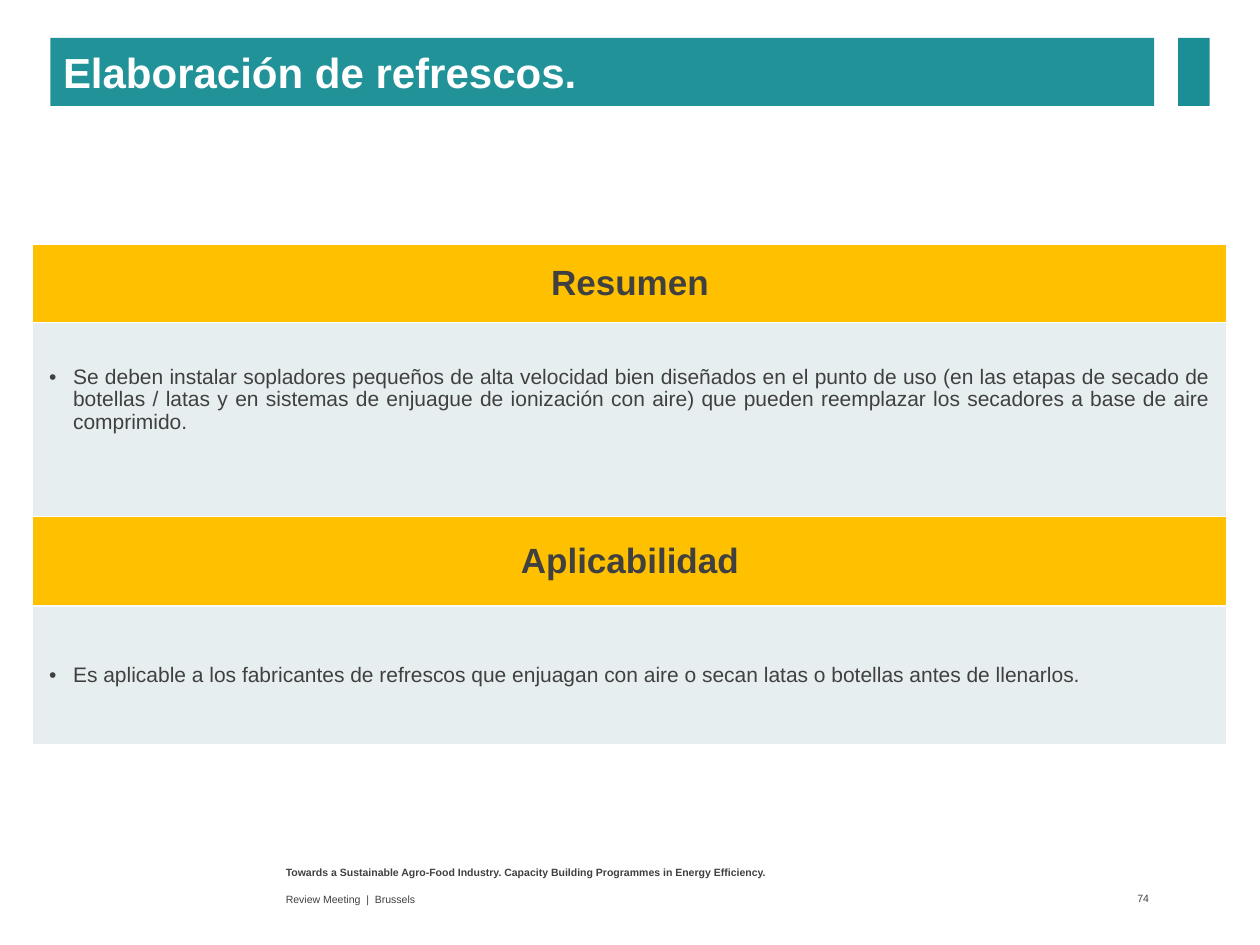
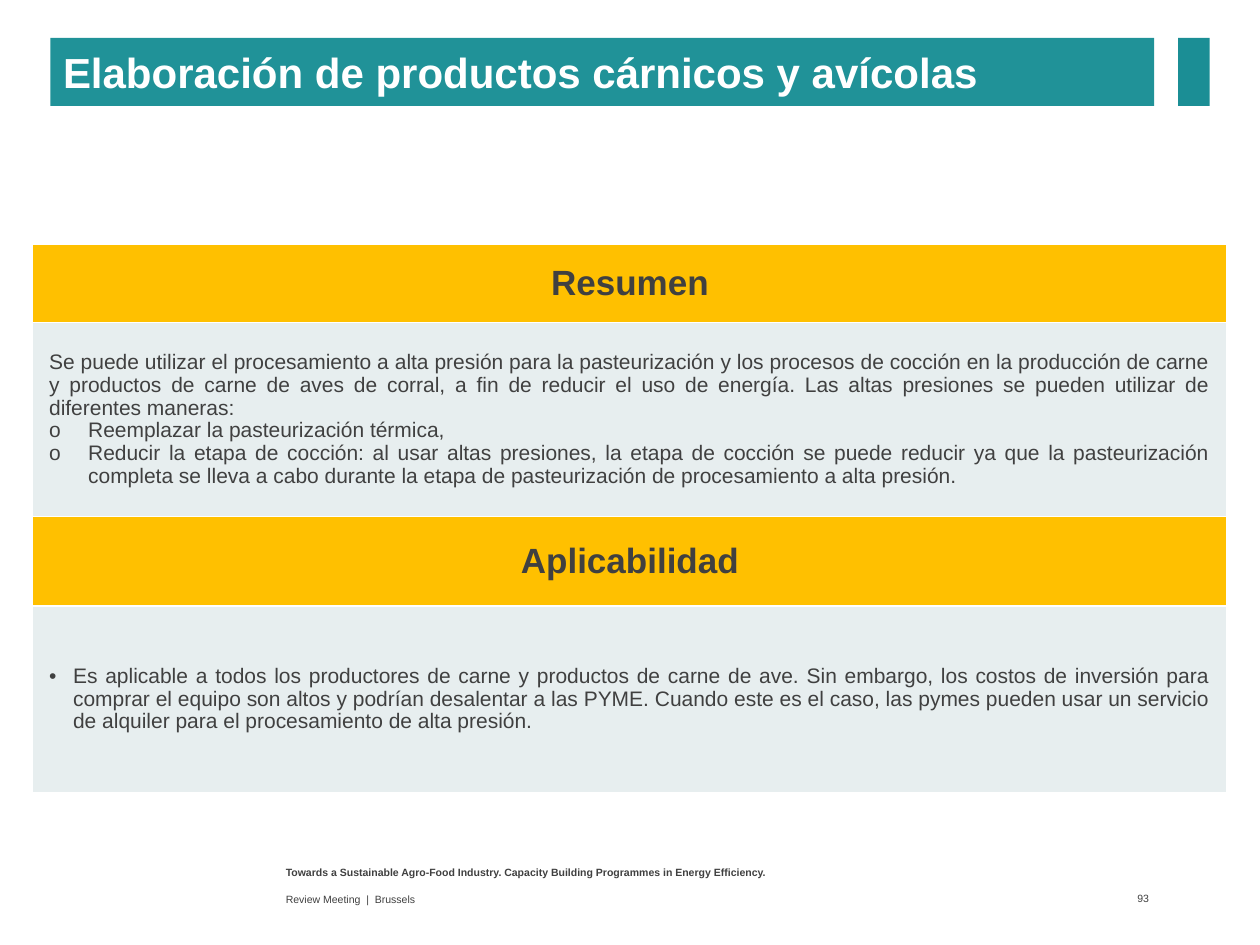
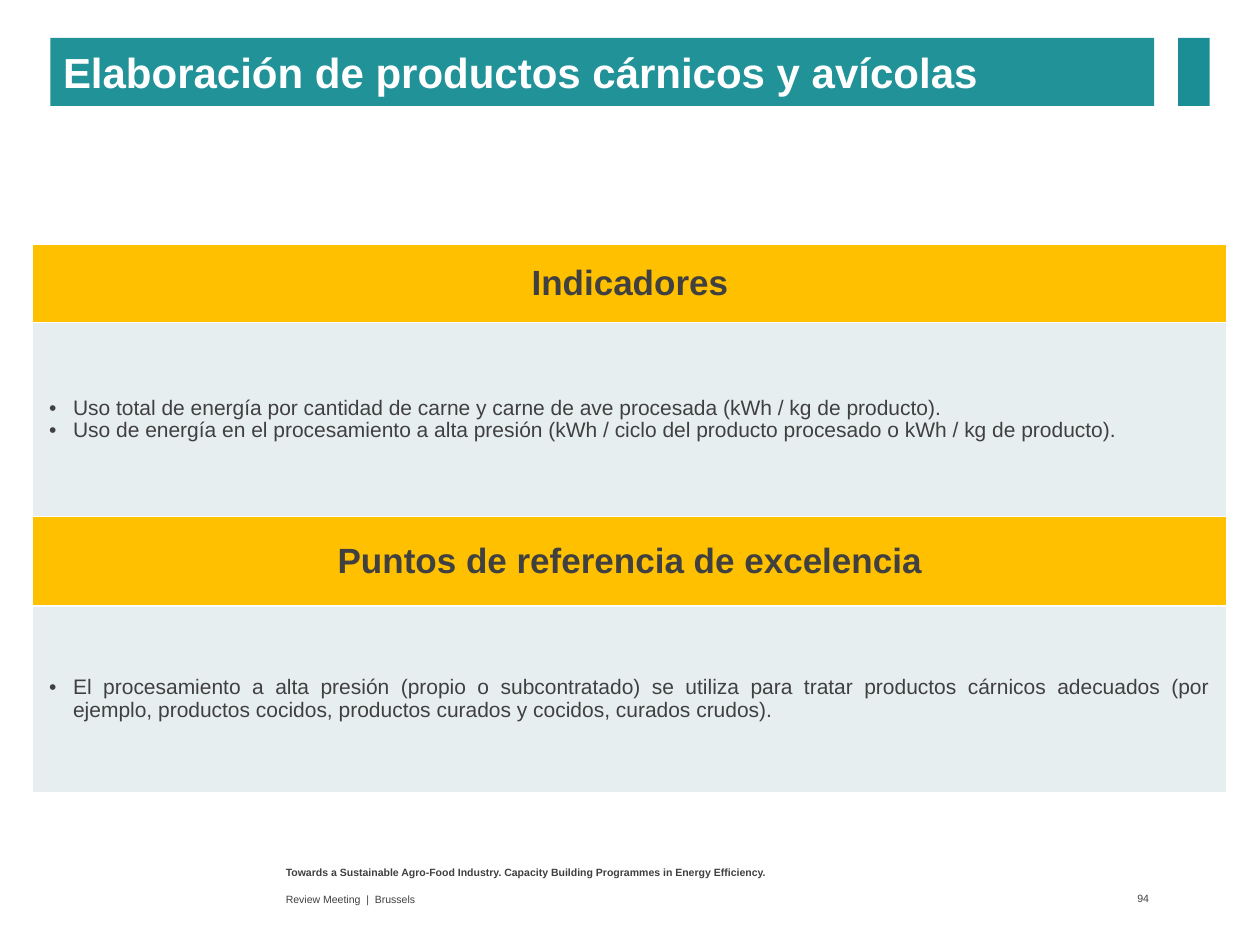
from pptx import Presentation
from pptx import util as u
from pptx.dml.color import RGBColor
from pptx.enum import shapes, text
from pptx.oxml.ns import qn
from lxml import etree

FONT = "Arial"
TEAL, DARK_TEAL, AMBER, PALE = "209298", "1B8E95", "FFC000", "E7EEEF"
INK, WHITE = "404040", "FFFFFF"

PROGRAMME = ("Towards a Sustainable Agro-Food Industry. "
             "Capacity Building Programmes in Energy Efficiency.")
MEETING = "Review Meeting  |  Brussels"

# Indent in inches for each bullet character
INDENTS = {"•": 0.19, "o": 0.31, None: 0}

TABLE_LEFT, TABLE_TOP, TABLE_WIDTH = 0.26, 1.94, 9.48

# Each panel: heading, row heights, extra space under the text, (bullet, text) items
SLIDES = [
    {"title": "Elaboración de refrescos.", "number": 74, "panels": [
        ("Resumen", (0.62, 1.54), 0.31, [
            ("•", "Se deben instalar sopladores pequeños de alta velocidad bien diseñados en el "
                  "punto de uso (en las etapas de secado de botellas / latas y en sistemas de "
                  "enjuague de ionización con aire) que pueden reemplazar los secadores a base de "
                  "aire comprimido.")]),
        ("Aplicabilidad", (0.71, 1.1), 0, [
            ("•", "Es aplicable a los fabricantes de refrescos que enjuagan con aire o secan latas "
                  "o botellas antes de llenarlos.")]),
    ]},
    {"title": "Elaboración de productos cárnicos y avícolas", "number": 93, "panels": [
        ("Resumen", (0.62, 1.54), 0, [
            (None, "Se puede utilizar el procesamiento a alta presión para la pasteurización y los "
                   "procesos de cocción en la producción de carne y productos de carne de aves de "
                   "corral, a fin de reducir el uso de energía. Las altas presiones se pueden "
                   "utilizar de diferentes maneras:"),
            ("o", "Reemplazar la pasteurización térmica,"),
            ("o", "Reducir la etapa de cocción: al usar altas presiones, la etapa de cocción se "
                  "puede reducir ya que la pasteurización completa se lleva a cabo durante la etapa "
                  "de pasteurización de procesamiento a alta presión.")]),
        ("Aplicabilidad", (0.71, 1.48), 0, [
            ("•", "Es aplicable a todos los productores de carne y productos de carne de ave. Sin "
                  "embargo, los costos de inversión para comprar el equipo son altos y podrían "
                  "desalentar a las PYME. Cuando este es el caso, las pymes pueden usar un servicio "
                  "de alquiler para el procesamiento de alta presión.")]),
    ]},
    {"title": "Elaboración de productos cárnicos y avícolas", "number": 94, "panels": [
        ("Indicadores", (0.62, 1.54), 0, [
            ("•", "Uso total de energía por cantidad de carne y carne de ave procesada "
                  "(kWh / kg de producto)."),
            ("•", "Uso de energía en el procesamiento a alta presión (kWh / ciclo del producto "
                  "procesado o kWh / kg de producto).")]),
        ("Puntos de referencia de excelencia", (0.71, 1.48), 0, [
            ("•", "El procesamiento a alta presión (propio o subcontratado) se utiliza para tratar "
                  "productos cárnicos adecuados (por ejemplo, productos cocidos, productos curados "
                  "y cocidos, curados crudos).")]),
    ]},
]


def paint(target, colour):
    target.fill.solid()
    target.fill.fore_color.rgb = RGBColor.from_string(colour)


def style(para, size, colour=INK, bold=False, align=text.PP_ALIGN.LEFT):
    para.alignment = align
    for span in para.runs:
        span.font.name = FONT
        span.font.size = u.Pt(size)
        span.font.bold = bold
        span.font.color.rgb = RGBColor.from_string(colour)


def place(shape, left, top, width, height):
    shape.left, shape.top = u.Inches(left), u.Inches(top)
    shape.width, shape.height = u.Inches(width), u.Inches(height)


def add_title(page, title):
    bar = page.shapes.title
    place(bar, 0.4, 0.3, 8.76, 0.54)
    paint(bar, TEAL)
    frame = bar.text_frame
    frame.text = title
    frame.auto_size = text.MSO_AUTO_SIZE.NONE
    frame.vertical_anchor = text.MSO_ANCHOR.MIDDLE
    style(frame.paragraphs[0], 24, WHITE, bold=True)

    accent = page.shapes.add_shape(shapes.MSO_SHAPE.RECTANGLE, 0, 0, 0, 0)
    place(accent, 9.35, 0.3, 0.25, 0.54)
    accent.shadow.inherit = False
    paint(accent, DARK_TEAL)
    accent.line.fill.background()


def add_label(page, words, place_at, anchor=text.MSO_ANCHOR.MIDDLE, right_inset=0.1, **look):
    box = page.shapes.add_textbox(0, 0, 0, 0)
    place(box, *place_at)
    frame = box.text_frame
    frame.word_wrap = True
    frame.vertical_anchor = anchor
    frame.margin_right = u.Inches(right_inset)
    frame.text = words
    style(frame.paragraphs[0], 6, **look)


def add_footer(page, number):
    add_label(page, PROGRAMME, (2.17, 6.82, 5.5, 0.21), text.MSO_ANCHOR.TOP, bold=True)
    add_label(page, MEETING, (2.17, 7.04, 5.5, 0.19))
    add_label(page, str(number), (8.6, 7.03, 0.56, 0.2), right_inset=0.04,
              align=text.PP_ALIGN.RIGHT)


def set_bullet(para, bullet):
    props = para._p.get_or_add_pPr()
    indent = u.Inches(INDENTS[bullet])
    props.set("marL", str(indent))
    props.set("indent", str(-indent))
    if bullet:
        etree.SubElement(props, qn("a:buFont")).set("typeface", FONT)
        etree.SubElement(props, qn("a:buChar")).set("char", bullet)
    else:
        etree.SubElement(props, qn("a:buNone"))


def format_cell(cell, colour, side, edge, extra_bottom=0):
    """Give a cell white borders, a fill and its insets (side, then top and bottom edge)."""
    props = cell._tc.get_or_add_tcPr()
    for name in ("lnL", "lnR", "lnT", "lnB"):
        line = etree.SubElement(props, qn("a:" + name), w=str(u.Pt(1)))
        fill = etree.SubElement(line, qn("a:solidFill"))
        etree.SubElement(fill, qn("a:srgbClr")).set("val", WHITE)
    paint(cell, colour)
    cell.vertical_anchor = text.MSO_ANCHOR.MIDDLE
    cell.margin_left = cell.margin_right = u.Inches(side)
    cell.margin_top = u.Inches(edge)
    cell.margin_bottom = u.Inches(edge + extra_bottom)


def add_panel(page, top, heading, heights, extra_bottom, items):
    table = page.shapes.add_table(2, 1, u.Inches(TABLE_LEFT), u.Inches(top),
                                  u.Inches(TABLE_WIDTH), u.Inches(sum(heights))).table
    for row, height in zip(table.rows, heights):
        row.height = u.Inches(height)

    head, body = table.cell(0, 0), table.cell(1, 0)
    format_cell(head, AMBER, 0.1, 0.05)
    head.text = heading
    style(head.text_frame.paragraphs[0], 20, bold=True, align=text.PP_ALIGN.CENTER)

    format_cell(body, PALE, 0.13, 0.06, extra_bottom)
    body.text = "\n".join(words for _, words in items)
    for para, (bullet, _) in zip(body.text_frame.paragraphs, items):
        set_bullet(para, bullet)
        para.line_spacing = 0.97
        style(para, 12, align=text.PP_ALIGN.JUSTIFY)


def main():
    deck = Presentation()
    deck.slide_width, deck.slide_height = u.Inches(10), u.Inches(7.5)
    title_only = deck.slide_layouts[5]
    for content in SLIDES:
        page = deck.slides.add_slide(title_only)
        add_title(page, content["title"])
        top = TABLE_TOP
        for heading, heights, extra_bottom, items in content["panels"]:
            add_panel(page, top, heading, heights, extra_bottom, items)
            top += sum(heights)
        add_footer(page, content["number"])
    deck.save("out.pptx")


if __name__ == "__main__":
    main()
